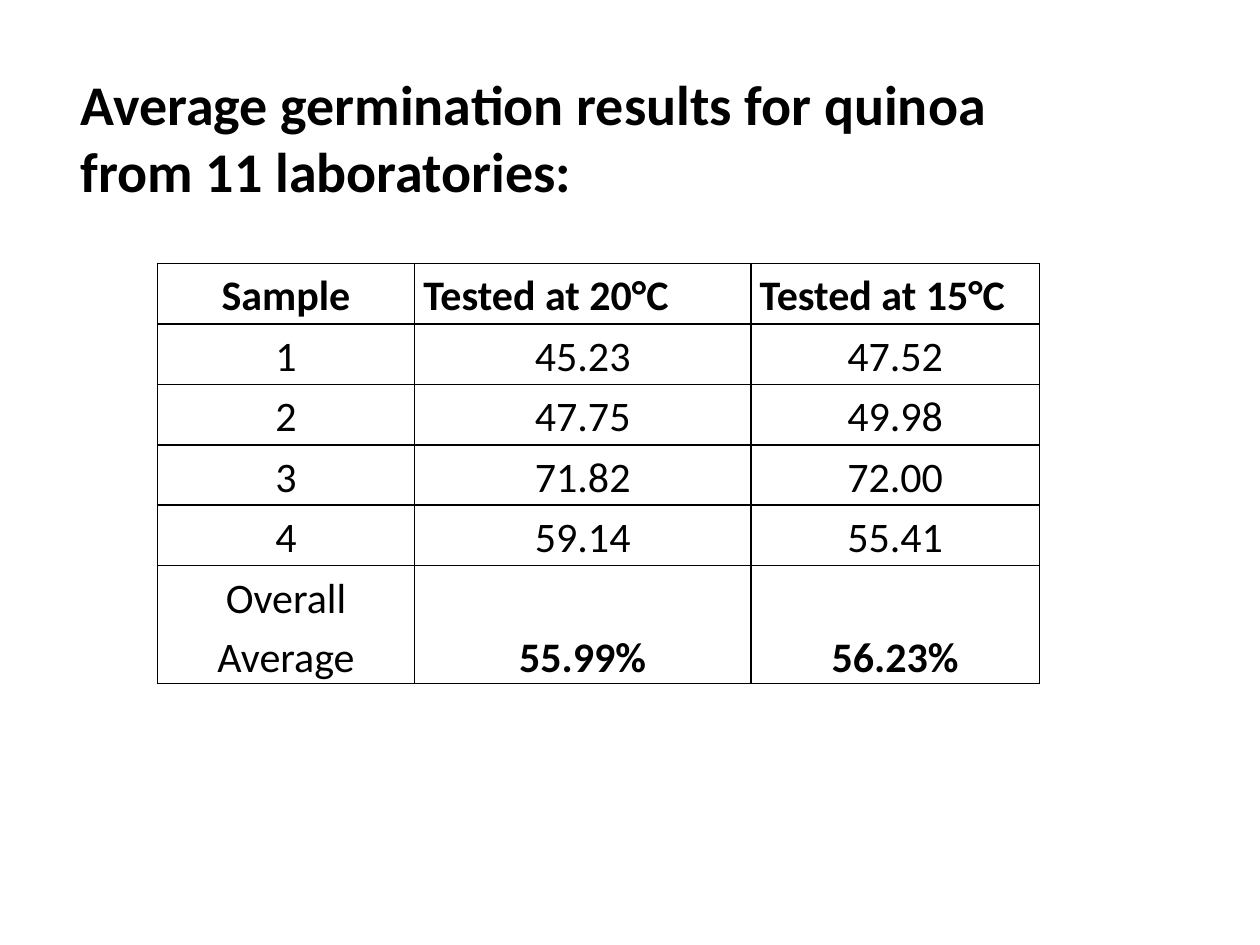
from pptx import Presentation
from pptx.dml.color import RGBColor
from pptx.enum.text import MSO_ANCHOR as Anchor, MSO_AUTO_SIZE as AutoSize, PP_ALIGN as Align
from pptx.oxml import parse_xml
from pptx.oxml.ns import nsdecls
from pptx.util import Inches, Pt

COLORS = {"text": "000000", "border": "000000"}
FONT = "Calibri"
TITLE = "Average germination results for quinoa from 11 laboratories:"
ROWS = [
    ("Sample", "Tested at 20°C", "Tested at 15°C"),
    ("1", "45.23", "47.52"),
    ("2", "47.75", "49.98"),
    ("3", "71.82", "72.00"),
    ("4", "59.14", "55.41"),
    ("Overall Average", "55.99%", "56.23%"),
]
COLUMN_WIDTHS = (2.04, 2.67, 2.29)
ROW_HEIGHTS = (0.48,) * 5 + (0.81,)


def format_paragraph(para, size, bold, align):
    para.alignment = align
    for span in para.runs:
        span.font.name = FONT
        span.font.size = Pt(size)
        span.font.bold = bold
        span.font.color.rgb = RGBColor.from_string(COLORS["text"])


def add_title(page):
    title = page.shapes.title
    title.left, title.top = Inches(0.42), Inches(0.5)
    title.width, title.height = Inches(8.5), Inches(1.58)
    frame = title.text_frame
    frame.text = TITLE
    frame.word_wrap = True
    frame.auto_size = AutoSize.NONE
    frame.vertical_anchor = Anchor.TOP
    frame.margin_left = Inches(0.22)
    format_paragraph(frame.paragraphs[0], 32, True, Align.LEFT)


def add_borders(cell):
    properties = cell._tc.get_or_add_tcPr()
    for position, side in enumerate(("lnL", "lnR", "lnT", "lnB")):
        border = parse_xml(
            f'<a:{side} {nsdecls("a")} w="{Pt(1)}"><a:solidFill>'
            f'<a:srgbClr val="{COLORS["border"]}"/></a:solidFill></a:{side}>'
        )
        properties.insert(position, border)


def fill_cell(cell, text, bold, align, anchor):
    cell.text = text
    cell.fill.background()
    cell.vertical_anchor = anchor
    cell.margin_left = cell.margin_right = Inches(0.07)
    cell.margin_top = cell.margin_bottom = 0
    para = cell.text_frame.paragraphs[0]
    para.line_spacing = 1.15
    format_paragraph(para, 24, bold, align)
    add_borders(cell)


def add_results_table(page):
    frame = page.shapes.add_table(
        len(ROWS), len(COLUMN_WIDTHS), Inches(1.25), Inches(2.09),
        Inches(sum(COLUMN_WIDTHS)), Inches(sum(ROW_HEIGHTS)),
    )
    table = frame.table
    table.first_row = table.horz_banding = False
    for column, width in zip(table.columns, COLUMN_WIDTHS):
        column.width = Inches(width)
    for row, height in zip(table.rows, ROW_HEIGHTS):
        row.height = Inches(height)
    last = len(ROWS) - 1
    for r, values in enumerate(ROWS):
        for c, value in enumerate(values):
            bold = r == 0 or (r == last and c > 0)
            align = Align.LEFT if r == 0 and c > 0 else Align.CENTER
            anchor = Anchor.BOTTOM if r == last else Anchor.TOP
            fill_cell(table.cell(r, c), value, bold, align, anchor)


def main():
    deck = Presentation()
    deck.slide_width, deck.slide_height = Inches(10), Inches(7.5)
    page = deck.slides.add_slide(deck.slide_layouts[5])
    add_title(page)
    add_results_table(page)
    deck.save("out.pptx")


if __name__ == "__main__":
    main()
